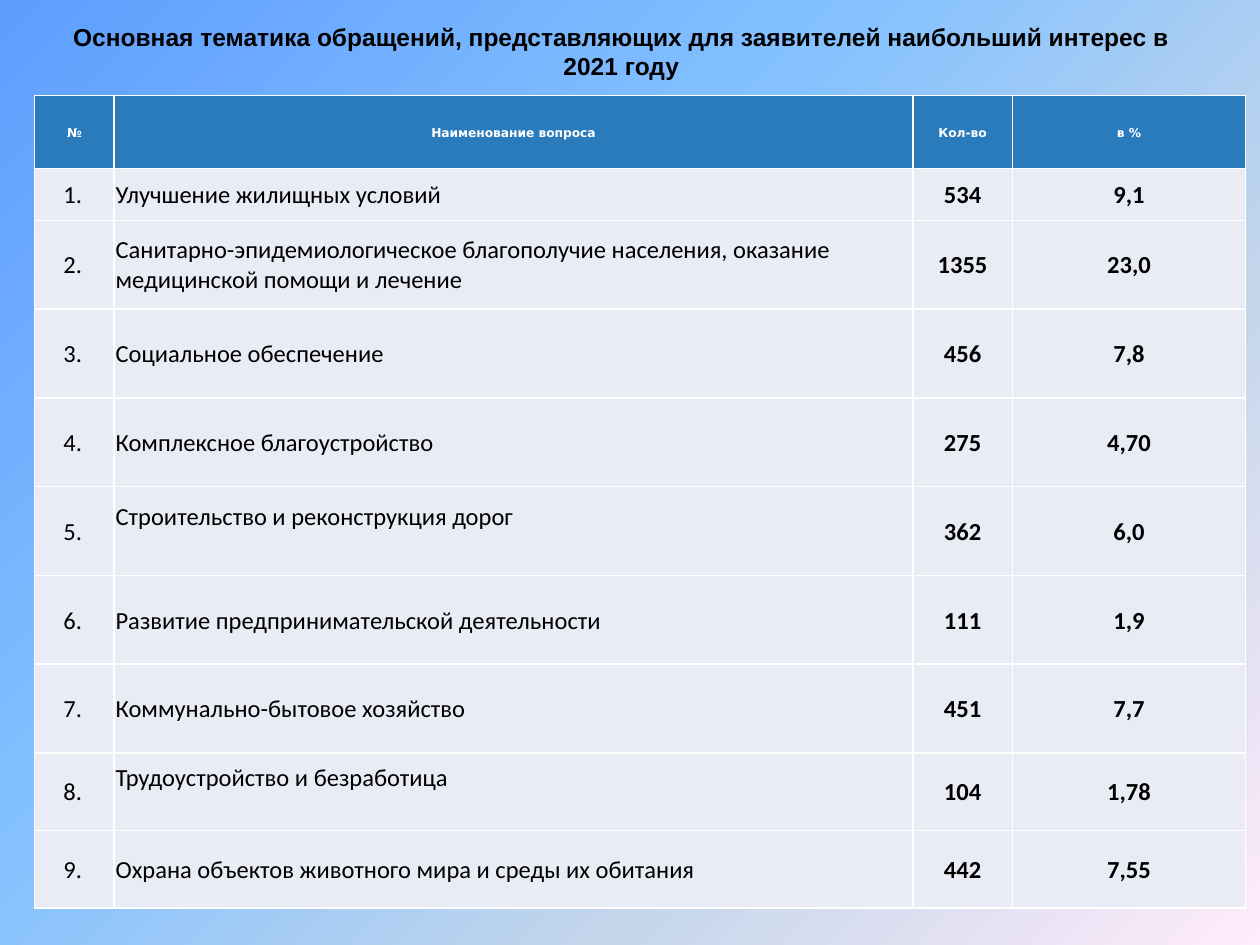
from copy import deepcopy
from dataclasses import dataclass

from pptx import Presentation
from pptx.dml.color import RGBColor as RGB
from pptx.enum.text import MSO_ANCHOR as Anchor, PP_ALIGN as Align
from pptx.oxml.ns import qn
from pptx.util import Cm, Pt
from lxml.etree import SubElement


@dataclass(frozen=True)
class Theme:
    ink: str = "000000"
    white: str = "FFFFFF"
    header_fill: str = "297BBC"
    body_fill: str = "E9EBF5"
    backdrop: tuple = ((0, "5E9EFF"), (0.4, "85C2FF"),
                       (0.7, "C4D6EB"), (1, "FFEBFA"))
    title_font: str = "Arial"
    header_font: str = "DejaVu Sans"
    body_font: str = "Calibri"
    text_size: int = 14
    header_size: int = 7
    border_width: int = 1


def apply(target, formats):
    for attribute, value in formats.items():
        setattr(target, attribute, value)


class SlideBuilder:
    def __init__(self, slide, theme):
        self.slide = slide
        self.theme = theme

    def background(self):
        fill = self.slide.background.fill
        fill.gradient()
        fill.gradient_angle = 315  # counter-clockwise: top left to bottom right
        stop_list = self.slide.element.find(".//" + qn("a:gsLst"))
        while len(stop_list) < len(self.theme.backdrop):
            stop_list.append(deepcopy(stop_list[0]))
        for stop, (position, color) in zip(fill.gradient_stops, self.theme.backdrop):
            stop.position = position
            stop.color.rgb = RGB.from_string(color)

    def label(self, frame, text, align, color, **font):
        paragraph = frame.paragraphs[0]
        paragraph.alignment = align
        run = paragraph.add_run()
        run.text = text
        apply(run.font, font)
        run.font.color.rgb = RGB.from_string(color)

    def title(self, text, left, top, width, height):
        frame = self.slide.shapes.add_textbox(left, top, width, height).text_frame
        apply(frame, {"word_wrap": True, "vertical_anchor": Anchor.MIDDLE})
        self.label(frame, text, Align.CENTER, self.theme.ink, bold=True,
                   name=self.theme.title_font, size=Pt(self.theme.text_size))

    def table(self, left, top, widths, heights):
        table = self.slide.shapes.add_table(
            len(heights), len(widths), left, top, sum(widths), sum(heights)).table
        table.horz_banding = False
        for column, width in zip(table.columns, widths):
            column.width = width
        for row, height in zip(table.rows, heights):
            row.height = height
        return table

    def borders(self, cell):
        properties = cell._tc.get_or_add_tcPr()
        for position, side in enumerate(("a:lnL", "a:lnR", "a:lnT", "a:lnB")):
            line = properties.makeelement(
                qn(side), {"w": str(int(Pt(self.theme.border_width)))})
            solid = SubElement(line, qn("a:solidFill"))
            SubElement(solid, qn("a:srgbClr"), val=self.theme.white)
            properties.insert(position, line)

    def cell(self, cell, text, fill, align, color, indent=0.03, lift=0, **font):
        apply(cell, {"vertical_anchor": Anchor.MIDDLE, "margin_left": Cm(indent),
                     "margin_right": Cm(0.03), "margin_top": Cm(0.03),
                     "margin_bottom": Cm(lift)})
        cell.fill.solid()
        cell.fill.fore_color.rgb = RGB.from_string(fill)
        self.borders(cell)
        self.label(cell.text_frame, text, align, color, **font)


HEADINGS = ("№", "Наименование вопроса", "Кол-во", "в %")
TOPICS = (
    ("Улучшение жилищных условий", "534", "9,1"),
    ("Санитарно-эпидемиологическое благополучие населения, оказание "
     "медицинской помощи и лечение", "1355", "23,0"),
    ("Социальное обеспечение", "456", "7,8"),
    ("Комплексное благоустройство", "275", "4,70"),
    ("Строительство и реконструкция дорог", "362", "6,0"),
    ("Развитие предпринимательской деятельности", "111", "1,9"),
    ("Коммунально-бытовое хозяйство", "451", "7,7"),
    ("Трудоустройство и безработица", "104", "1,78"),
    ("Охрана объектов животного мира и среды их обитания", "442", "7,55"),
)
RAISED_TOPICS = (5, 8)  # names that sit above the middle of their row


def main():
    theme = Theme()
    deck = Presentation()
    apply(deck, {"slide_width": Cm(25.4), "slide_height": Cm(19.05)})
    builder = SlideBuilder(deck.slides.add_slide(deck.slide_layouts[6]), theme)

    # Background and title
    builder.background()
    builder.title("Основная тематика обращений, представляющих для заявителей "
                  "наибольший интерес в 2021 году",
                  Cm(0.89), Cm(0.33), Cm(23.27), Cm(1.4))

    # Table grid
    widths = [Cm(w) for w in (1.6, 16.1, 2.01, 4.7)]
    heights = [Cm(h) for h in (1.47, 1.04, *[1.79] * 6, *[1.56] * 2)]
    appeals = builder.table(Cm(0.7), Cm(1.93), widths, heights)

    # Header row
    for column, heading in enumerate(HEADINGS):
        builder.cell(appeals.cell(0, column), heading, theme.header_fill,
                     Align.CENTER, theme.white, bold=True,
                     name=theme.header_font, size=Pt(theme.header_size))

    # Topic rows
    for number, (topic, count, share) in enumerate(TOPICS, 1):
        lift = 0.6 if number in RAISED_TOPICS else 0
        columns = (
            (f"{number}.", {"align": Align.LEFT, "bold": False, "indent": 0.58}),
            (topic, {"align": Align.LEFT, "bold": False, "lift": lift}),
            (count, {"align": Align.CENTER, "bold": True}),
            (share, {"align": Align.CENTER, "bold": True}),
        )
        for column, (text, formats) in enumerate(columns):
            builder.cell(appeals.cell(number, column), text, theme.body_fill,
                         color=theme.ink, name=theme.body_font,
                         size=Pt(theme.text_size), **formats)

    deck.save("out.pptx")


if __name__ == "__main__":
    main()
